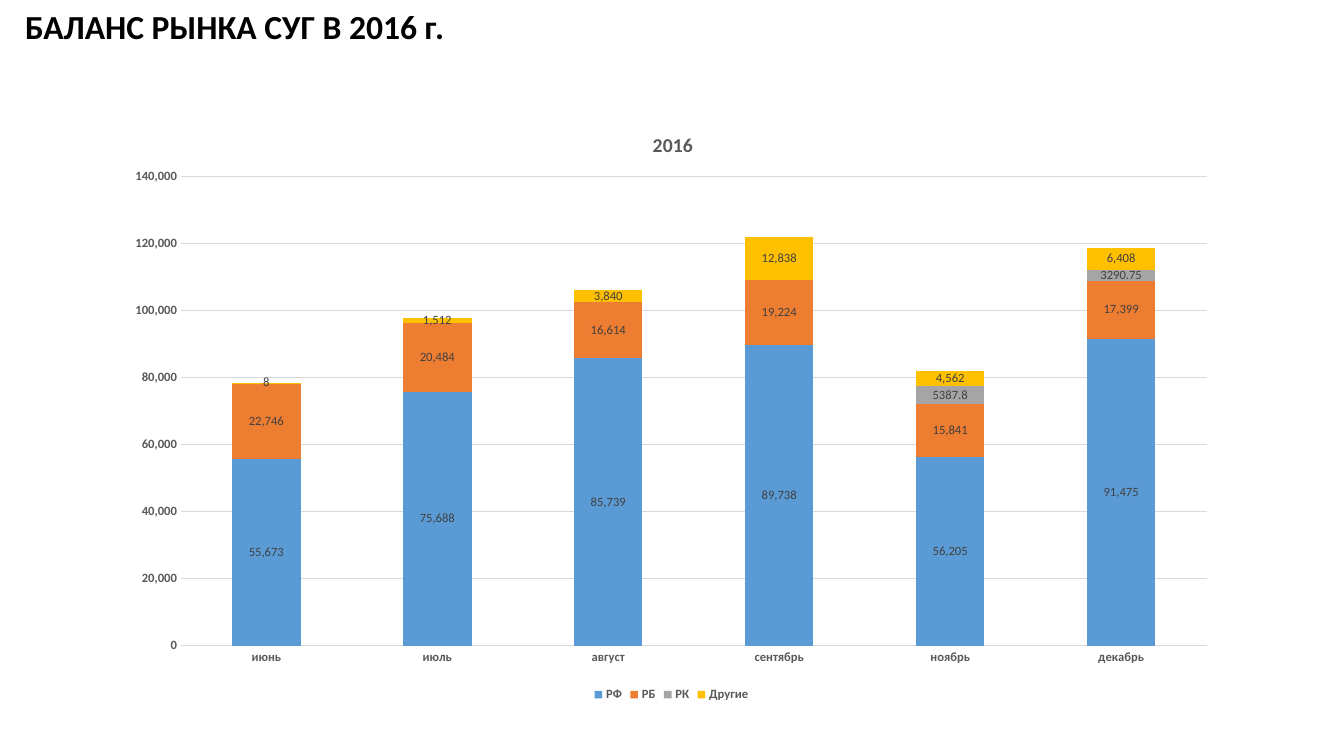
from lxml.etree import SubElement
from pptx import Presentation
from pptx.chart.data import CategoryChartData
from pptx.dml.color import RGBColor
from pptx.enum.chart import XL_CHART_TYPE as ChartType
from pptx.enum.chart import XL_LEGEND_POSITION as LegendPosition
from pptx.enum.chart import XL_TICK_MARK as TickMark
from pptx.enum.text import MSO_ANCHOR, MSO_AUTO_SIZE, PP_ALIGN
from pptx.oxml import parse_xml
from pptx.oxml.ns import nsdecls, qn
from pptx.util import Emu, Pt

SLIDE_W, SLIDE_H = 1344, 756
EMU_PER_PX = 12192000 / SLIDE_W

BLACK = RGBColor(0x00, 0x00, 0x00)
AXIS_TEXT = RGBColor(0x59, 0x59, 0x59)
LABEL_TEXT = RGBColor(0x40, 0x40, 0x40)
GRID = RGBColor(0xD9, 0xD9, 0xD9)
BLUE = RGBColor(0x5B, 0x9B, 0xD5)
ORANGE = RGBColor(0xED, 0x7D, 0x31)
GRAY = RGBColor(0xA5, 0xA5, 0xA5)
GOLD = RGBColor(0xFF, 0xC0, 0x00)

THOUSANDS = "#,##0"
MONTHS = ["июнь", "июль", "август", "сентябрь", "ноябрь", "декабрь"]
SUPPLIERS = [
    ("РФ", BLUE, THOUSANDS, [55673, 75688, 85739, 89738, 56205, 91475]),
    ("РБ", ORANGE, THOUSANDS, [22746, 20484, 16614, 19224, 15841, 17399]),
    ("РК", GRAY, "General", [None, None, None, None, 5387.8, 3290.75]),
    ("Другие", GOLD, THOUSANDS, [8, 1512, 3840, 12838, 4562, 6408]),
]


def px(length):
    return Emu(round(length * EMU_PER_PX))


class BalanceSlide:
    font_name = "Calibri"

    def __init__(self, presentation):
        self.slide = presentation.slides.add_slide(presentation.slide_layouts[0])

    def style(self, font, size, color, bold=False):
        font.name = self.font_name
        font.size = Pt(size)
        font.bold = bold
        font.color.rgb = color

    def title(self, text, left, top, width, height):
        heading = self.slide.shapes.title
        heading.left, heading.top = px(left), px(top)
        heading.width, heading.height = px(width), px(height)
        frame = heading.text_frame
        frame.word_wrap = True
        frame.auto_size = MSO_AUTO_SIZE.NONE
        frame.vertical_anchor = MSO_ANCHOR.BOTTOM
        line = frame.paragraphs[0]
        line.alignment = PP_ALIGN.LEFT
        line.line_spacing = 0.9
        run = line.add_run()
        run.text = text
        self.style(run.font, 24, BLACK, bold=True)

    def remove_empty_placeholders(self):
        for holder in list(self.slide.placeholders):
            if not holder.text_frame.text:
                holder.element.getparent().remove(holder.element)

    def stacked_chart(self, caption, left, top, width, height):
        # Data
        data = CategoryChartData()
        data.categories = MONTHS
        for name, _, number_format, tonnes in SUPPLIERS:
            data.add_series(name, tonnes, number_format)
        chart = self.slide.shapes.add_chart(
            ChartType.COLUMN_STACKED, px(left), px(top), px(width), px(height), data
        ).chart
        self.style(chart.font, 10, BLACK)

        # Columns and their labels
        plot = chart.plots[0]
        plot.gap_width, plot.overlap = 150, 100
        plot.vary_by_categories = False
        for series, (_, color, number_format, _) in zip(plot.series, SUPPLIERS):
            series.format.fill.solid()
            series.format.fill.fore_color.rgb = color
            labels = series.data_labels
            labels.show_value = True
            labels.number_format = number_format
            labels.number_format_is_linked = False
            self.style(labels.font, 9, LABEL_TEXT)

        # Axes
        months, volume = chart.category_axis, chart.value_axis
        for axis in (months, volume):
            axis.major_tick_mark = axis.minor_tick_mark = TickMark.NONE
            self.style(axis.tick_labels.font, 9, AXIS_TEXT, bold=True)
        volume.has_major_gridlines = True
        for line in (months.format.line, volume.major_gridlines.format.line):
            line.color.rgb = GRID
            line.width = Pt(0.75)
        volume.format.line.fill.background()
        volume.tick_labels.number_format = THOUSANDS
        volume.tick_labels.number_format_is_linked = False

        # Legend
        chart.has_legend = True
        chart.legend.position = LegendPosition.BOTTOM
        chart.legend.include_in_layout = False
        self.style(chart.legend.font, 9, AXIS_TEXT, bold=True)

        # Caption
        chart.has_title = True
        run = chart.chart_title.text_frame.paragraphs[0].add_run()
        run.text = caption
        self.style(run.font, 14, AXIS_TEXT, bold=True)

        # Places of the caption and the plot area
        title = chart.element.find(".//" + qn("c:title"))
        self.place(title, 1, x=0.48, y=0.04)
        area = chart.element.find(".//" + qn("c:plotArea"))
        self.place(area, 0, layoutTarget="inner", x=0.06, y=0.12, w=0.92, h=0.78)

    def place(self, part, index, layoutTarget=None, **fractions):
        for old in part.findall(qn("c:layout")):
            part.remove(old)
        layout = parse_xml(f"<c:layout {nsdecls('c')}><c:manualLayout/></c:layout>")
        settings = {"layoutTarget": layoutTarget} if layoutTarget else {}
        settings.update(xMode="edge", yMode="edge", **fractions)
        for tag, setting in settings.items():
            SubElement(layout[0], qn("c:" + tag)).set("val", str(setting))
        part.insert(index, layout)


def main():
    presentation = Presentation()
    presentation.slide_width, presentation.slide_height = px(SLIDE_W), px(SLIDE_H)
    balance = BalanceSlide(presentation)
    balance.title("БАЛАНС РЫНКА СУГ В 2016 г.", 15, 15, 1008, 37)
    balance.remove_empty_placeholders()
    balance.stacked_chart("2016", 114, 104, 1115, 602)
    presentation.save("out.pptx")


if __name__ == "__main__":
    main()
